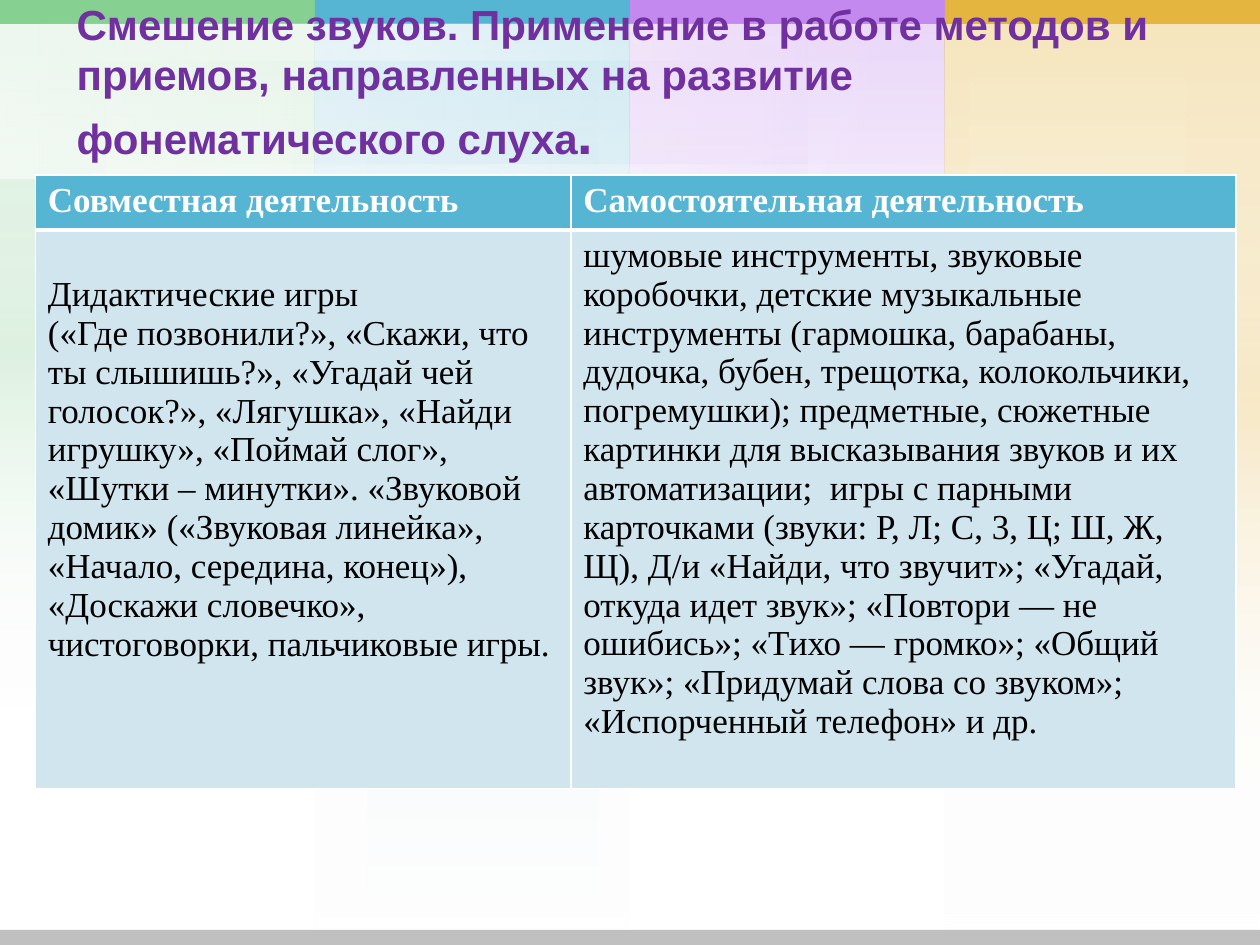
from lxml import etree
from pptx import Presentation
from pptx.dml.color import RGBColor
from pptx.enum.shapes import MSO_SHAPE
from pptx.enum.text import MSO_ANCHOR
from pptx.oxml import parse_xml
from pptx.oxml.ns import nsdecls, qn
from pptx.util import Pt

RECT = MSO_SHAPE.RECTANGLE
MIDDLE = MSO_ANCHOR.MIDDLE
GREEN, BLUE, VIOLET, GOLD = "86D092", "55B5D3", "C389EF", "E5B63F"
WHITE, BLACK, GREY, PURPLE, PALE = "FFFFFF", "000000", "C0C0C0", "7030A0", "D1E5EF"
COLUMN_W = 180

TITLE = ("Смешение звуков. Применение в работе методов и приемов, "
         "направленных на развитие фонематического слуха")
HEADERS = ["Совместная деятельность", "Самостоятельная деятельность"]
JOINT = [
    "Дидактические игры",
    "(«Где позвонили?», «Скажи, что ты слышишь?», «Угадай чей голосок?», "
    "«Лягушка», «Найди игрушку», «Поймай слог», «Шутки – минутки». "
    "«Звуковой домик» («Звуковая линейка», «Начало, середина, конец»), "
    "«Доскажи словечко», чистоговорки, пальчиковые игры.",
]
INDEPENDENT = [
    "шумовые инструменты, звуковые коробочки, детские музыкальные инструменты "
    "(гармошка, барабаны, дудочка, бубен, трещотка, колокольчики, погремушки); "
    "предметные, сюжетные картинки для высказывания звуков и их автоматизации;  "
    "игры с парными карточками (звуки: Р, Л; С, 3, Ц; Ш, Ж, Щ), "
    "Д/и «Найди, что звучит»; «Угадай, откуда идет звук»; «Повтори — не ошибись»; "
    "«Тихо — громко»; «Общий звук»; «Придумай слова со звуком»; "
    "«Испорченный телефон» и др.",
]


def rgb(color):
    return RGBColor.from_string(color)


def add_rect(s, x, y, w, h, color):
    sp = s.shapes.add_shape(RECT, Pt(x), Pt(y), Pt(w), Pt(h))
    sp.shadow.inherit = False
    sp.line.fill.background()
    sp.fill.solid()
    sp.fill.fore_color.rgb = rgb(color)
    return sp


def add_fade(s, x, y, w, h, color, alpha, glow=False, rotation=0):
    sp = add_rect(s, x, y, w, h, color)
    sp.rotation = rotation
    stops = [(0, color, alpha), (100, WHITE, 0)]
    if glow:
        stops = [(0, WHITE, 0), (50, color, alpha), (100, WHITE, 0)]
    grad = parse_xml(f'<a:gradFill {nsdecls("a")} rotWithShape="1"><a:gsLst/>'
                     '<a:lin ang="5400000" scaled="0"/></a:gradFill>')
    for pos, tint, opacity in stops:
        gs = etree.SubElement(grad[0], qn("a:gs"), pos=str(pos * 1000))
        clr = etree.SubElement(gs, qn("a:srgbClr"), val=tint)
        etree.SubElement(clr, qn("a:alpha"), val=str(opacity * 1000))
    solid = sp.element.spPr.find(qn("a:solidFill"))
    sp.element.spPr.replace(solid, grad)


def add_column(s, x, h, color, glows):
    add_fade(s, x, 0, COLUMN_W, h, color, 20)
    for left, w, glow_h in glows:
        add_fade(s, left, 0, w, glow_h, color, 20, glow=True)
    add_fade(s, x, 0, COLUMN_W, h, color, 20)


def add_background(s):
    add_column(s, 180, 540, BLUE, [(210.24, 131.76, 540)])
    add_column(s, 360, 404.64, VIOLET, [(360, 101.52, 404.64)])
    add_column(s, 540, 537.84, GOLD, [(540, 13.68, 458.64), (677.52, 42.48, 458.64)])
    add_column(s, 0, 404.64, GREEN, [(167.04, 12.96, 404.64), (0, 60.48, 404.64)])
    for i, color in enumerate([GREEN, BLUE, VIOLET, GOLD]):
        add_rect(s, i * COLUMN_W, 0, COLUMN_W, 13.68, color)
    sheens = [(299.52, -205.2, 7.2, 606.24, True), (226.8, -212.4, 87.84, 540.72, False),
              (220.32, -206.64, 20.88, 461.52, True), (226.8, -212.4, 87.84, 540.72, False)]
    for x, y, w, h, glow in sheens:
        add_fade(s, x, y, w, h, WHITE, 35, glow, 270)
    add_rect(s, 0, 531.36, 720, 8.64, GREY)


def style_run(r, font, size, color, bold):
    r.font.name = font
    r.font.size = Pt(size)
    r.font.bold = bold
    r.font.color.rgb = rgb(color)


def add_title(s):
    tf = s.shapes.add_textbox(Pt(36.72), Pt(25.92), Pt(663.12), Pt(79.2)).text_frame
    tf.word_wrap = True
    tf.vertical_anchor = MIDDLE
    tf.margin_bottom = Pt(40.6)
    p = tf.paragraphs[0]
    for text, size in [(TITLE, 24), (".", 32)]:
        r = p.add_run()
        r.text = text
        style_run(r, "Arial", size, PURPLE, True)


def set_borders(cell, **widths):
    tc_pr = cell._tc.get_or_add_tcPr()
    for i, side in enumerate("LRTB"):
        tc_pr.insert(i, parse_xml(
            f'<a:ln{side} {nsdecls("a")} w="{Pt(widths.get(side, 1))}"><a:solidFill>'
            f'<a:srgbClr val="{WHITE}"/></a:solidFill></a:ln{side}>'))


def fill_cell(cell, lines, fill, color, bold):
    cell.fill.solid()
    cell.fill.fore_color.rgb = rgb(fill)
    cell.text_frame.text = "\n".join(lines)
    for p in cell.text_frame.paragraphs:
        for r in p.runs:
            style_run(r, "Times New Roman", 20, color, bold)


def add_activities(s):
    table = s.shapes.add_table(2, 2, Pt(20.16), Pt(100.08), Pt(686.16), Pt(345.6)).table
    for column, w in zip(table.columns, [306, 380.16]):
        column.width = Pt(w)
    for row, h in zip(table.rows, [29.52, 316.08]):
        row.height = Pt(h)
    for i, (header, body) in enumerate(zip(HEADERS, [JOINT, INDEPENDENT])):
        fill_cell(table.cell(0, i), [header], BLUE, WHITE, True)
        set_borders(table.cell(0, i), B=3)
        fill_cell(table.cell(1, i), body, PALE, BLACK, False)
        set_borders(table.cell(1, i), T=3)
    table.cell(1, 0).margin_top = Pt(26)


def main():
    prs = Presentation()
    prs.slide_width, prs.slide_height = Pt(720), Pt(540)
    s = prs.slides.add_slide(prs.slide_layouts[6])
    add_background(s)
    add_title(s)
    add_activities(s)
    prs.save("out.pptx")


if __name__ == "__main__":
    main()
